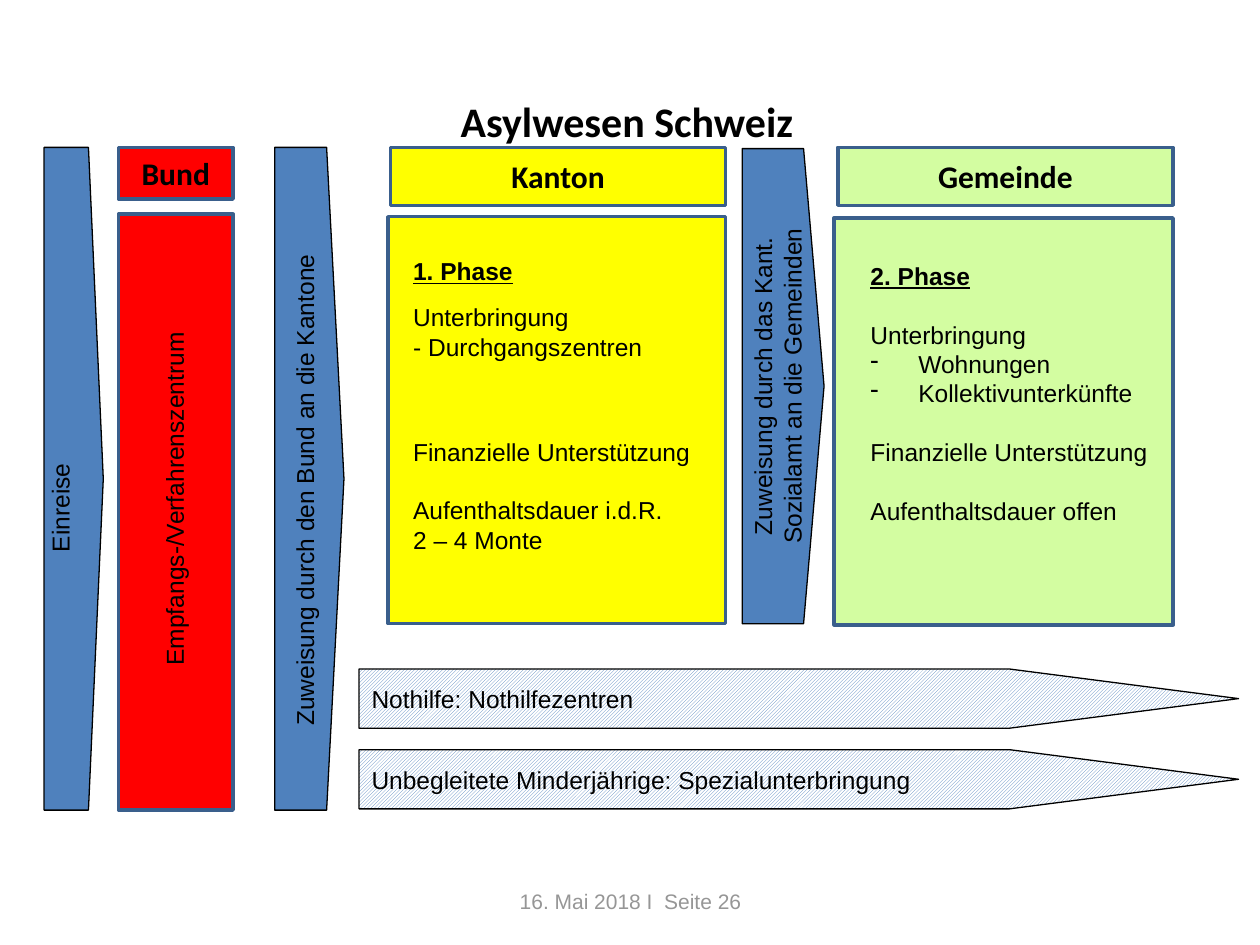
"""Build the slide on the Swiss asylum process."""
from dataclasses import dataclass

import lxml.etree
import pptx
import pptx.dml.color
import pptx.enum.dml
import pptx.enum.shapes
import pptx.enum.text
import pptx.oxml.ns
import pptx.util

Inches, Pt = pptx.util.Inches, pptx.util.Pt
RECT = pptx.enum.shapes.MSO_SHAPE.RECTANGLE
PLATE = pptx.enum.shapes.MSO_SHAPE.PENTAGON
LEFT, CENTER = pptx.enum.text.PP_ALIGN.LEFT, pptx.enum.text.PP_ALIGN.CENTER
TOP, MIDDLE = pptx.enum.text.MSO_ANCHOR.TOP, pptx.enum.text.MSO_ANCHOR.MIDDLE
RED, YELLOW, GREEN, BLUE = "FF0000", "FFFF00", "D3FDA1", "4F81BD"
BLACK, WHITE, GREY, BORDER = "000000", "FFFFFF", "969696", "3A5F8C"
LINE, HALF_LINE = 16.8, 9.6


@dataclass
class Box:
    x: float
    y: float
    w: float
    h: float


@dataclass
class Level:
    name: str
    color: str
    head: Box
    body: Box


@dataclass
class Line:
    text: str
    before: float = 0
    heading: bool = False
    bullet: bool = False


LEVELS = [
    Level("Bund", RED, Box(0.94, 1.17, 0.91, 0.41), Box(0.94, 1.7, 0.91, 4.73)),
    Level("Kanton", YELLOW, Box(3.1, 1.17, 2.66, 0.46), Box(3.08, 1.72, 2.68, 3.23)),
    Level("Gemeinde", GREEN, Box(6.65, 1.17, 2.66, 0.46), Box(6.62, 1.73, 2.69, 3.23)),
]
STEPS = [Box(0.35, 1.17, 0.47, 5.26), Box(2.18, 1.17, 0.55, 5.26), Box(5.89, 1.18, 0.65, 3.77)]
LABELS = [
    (Box(-1.92, 3.86, 4.8, 0.34), ["Einreise"]),
    (Box(-0.94, 3.79, 4.65, 0.34), ["Empfangs-/Verfahrenszentrum"]),
    (Box(0.02, 3.72, 4.8, 0.34), ["Zuweisung durch den Bund an die Kantone"]),
    (Box(4.28, 2.78, 3.78, 0.57), ["Zuweisung durch das Kant.", "Sozialamt an die Gemeinden"]),
]
PHASE_1 = [
    Line("1. Phase", heading=True),
    Line("Unterbringung", HALF_LINE),
    Line("- Durchgangszentren"),
    Line("Finanzielle Unterstützung", 2 * LINE + HALF_LINE),
    Line("Aufenthaltsdauer i.d.R.", LINE),
    Line("2 – 4 Monte"),
]
PHASE_2 = [
    Line("2. Phase", heading=True),
    Line("Unterbringung", LINE),
    Line("Wohnungen", bullet=True),
    Line("Kollektivunterkünfte", bullet=True),
    Line("Finanzielle Unterstützung", LINE),
    Line("Aufenthaltsdauer offen", LINE),
]
SPECIAL_CASES = ["Nothilfe: Nothilfezentren", "Unbegleitete Minderjährige: Spezialunterbringung"]


def rgb(color: str) -> pptx.dml.color.RGBColor:
    return pptx.dml.color.RGBColor.from_string(color)


def place(box: Box) -> tuple:
    return Inches(box.x), Inches(box.y), Inches(box.w), Inches(box.h)


def add_bullet(p) -> None:
    pPr = p._p.get_or_add_pPr()
    pPr.set("marL", str(Inches(0.38)))
    pPr.set("indent", str(-Inches(0.38)))
    lxml.etree.SubElement(pPr, pptx.oxml.ns.qn("a:buChar")).set("char", "-")


def write(sp, lines: list[Line], size=14, font="Arial", color=BLACK, bold=False,
          align=LEFT, anchor=MIDDLE) -> None:
    tf = sp.text_frame
    tf.word_wrap, tf.vertical_anchor = True, anchor
    for i, line in enumerate(lines):
        p = tf.add_paragraph() if i else tf.paragraphs[0]
        p.alignment, p.space_before = align, Pt(line.before)
        if line.bullet:
            add_bullet(p)
        r = p.add_run()
        r.text = line.text
        r.font.name, r.font.size = font, Pt(size)
        r.font.bold = bold or line.heading
        r.font.underline = line.heading
        r.font.color.rgb = rgb(color)


def add_text(s, box: Box, lines: list[Line], rotation=0, **style):
    sp = s.shapes.add_textbox(*place(box))
    sp.rotation = rotation
    write(sp, lines, **style)


def add_shape(s, kind, box: Box, fill: str, border: str, width: float):
    sp = s.shapes.add_shape(kind, *place(box))
    sp.shadow.inherit = False
    sp.fill.solid()
    sp.fill.fore_color.rgb = rgb(fill)
    sp.line.color.rgb = rgb(border)
    sp.line.width = Pt(width)
    return sp


def add_arrow(s, box: Box, point: float):
    sp = add_shape(s, PLATE, box, BLUE, BLACK, 0.75)
    sp.adjustments[0] = point
    return sp


def add_hatched_arrow(s, box: Box, text: str) -> None:
    sp = add_arrow(s, box, 3.87)
    sp.fill.patterned()
    sp.fill.pattern = pptx.enum.dml.MSO_PATTERN.DARK_UPWARD_DIAGONAL
    sp.fill.fore_color.rgb = rgb(BLUE)
    sp.fill.back_color.rgb = rgb(WHITE)
    write(sp, [Line(text)])


def main() -> None:
    prs = pptx.Presentation()
    prs.slide_width, prs.slide_height = Inches(10), Inches(7.5)
    s = prs.slides.add_slide(prs.slide_layouts[5])
    title = s.shapes.title
    title.left, title.top, title.width, title.height = place(Box(0.39, 0.59, 9.17, 0.73))
    write(title, [Line("Asylwesen Schweiz")], size=24, font="Calibri", bold=True, align=CENTER)

    for level in LEVELS:
        add_shape(s, RECT, level.body, level.color, BORDER, 2)
        head = add_shape(s, RECT, level.head, level.color, BORDER, 2)
        write(head, [Line(level.name)], size=18, font="Calibri", bold=True, align=CENTER)
    for box in STEPS:
        add_arrow(s, box, 0.25)
    for box, texts in LABELS:
        add_text(s, box, [Line(t) for t in texts], rotation=270, align=CENTER, anchor=TOP)
    add_text(s, Box(3.18, 1.76, 2.51, 2.91), PHASE_1)
    add_text(s, Box(6.81, 2.02, 2.51, 2.76), PHASE_2, anchor=TOP)
    for i, text in enumerate(SPECIAL_CASES):
        add_hatched_arrow(s, Box(2.85, 5.31 + 0.64 * i, 6.98, 0.47), text)
    add_text(s, Box(3.42, 6.95, 3.17, 0.4), [Line("16. Mai 2018 I  Seite 26")],
             size=12, color=GREY, align=CENTER)
    prs.save("out.pptx")


if __name__ == "__main__":
    main()
